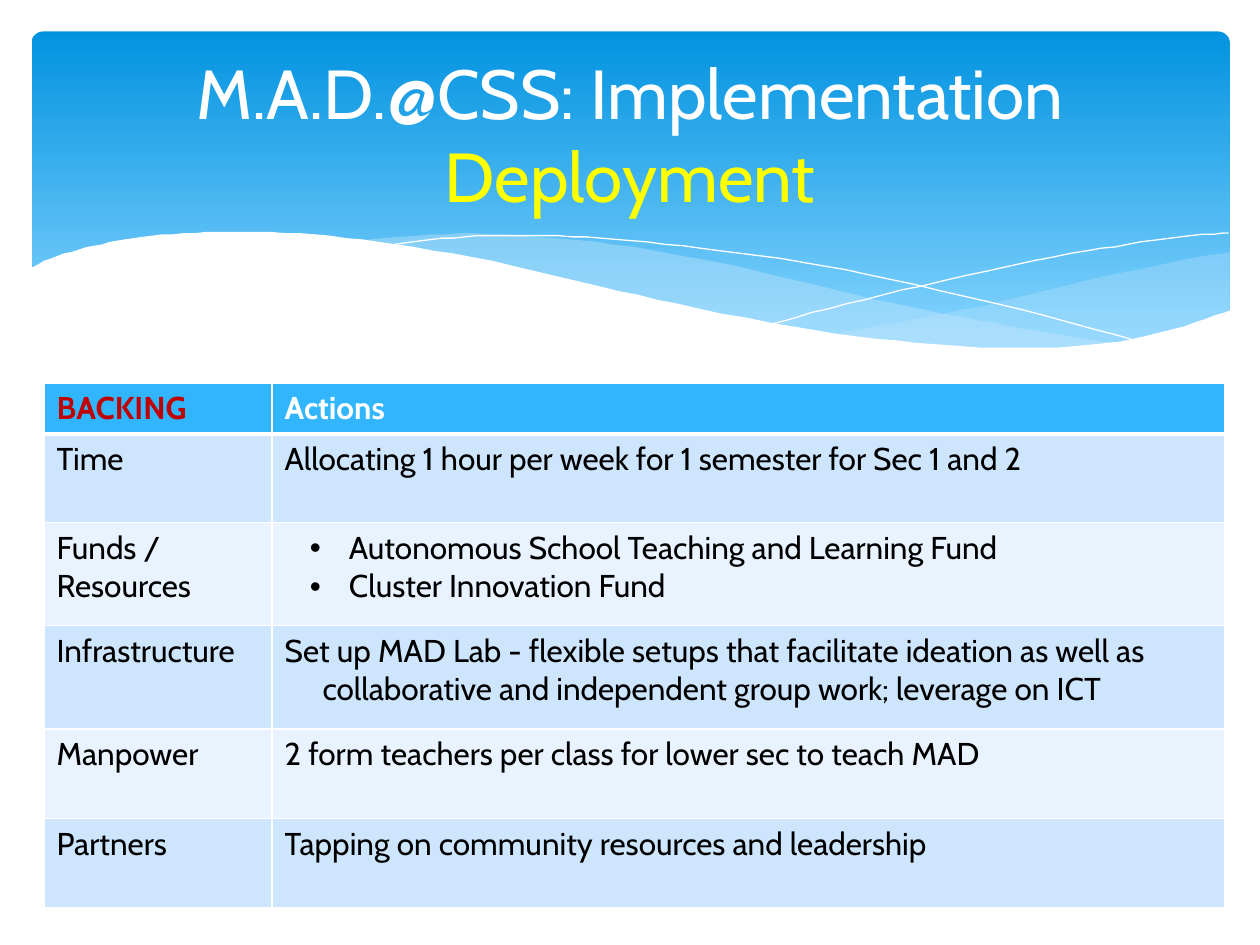
"""Build the slide on the deployment of M.A.D.@CSS: a wave banner, a title and a table."""
from pptx import Presentation
from pptx.dml.color import RGBColor
from pptx.enum.shapes import MSO_SHAPE as Shape
from pptx.enum.text import MSO_ANCHOR as Anchor, MSO_AUTO_SIZE as AutoSize, PP_ALIGN as Align
from pptx.oxml.ns import qn
from pptx.util import Inches, Pt
from lxml.etree import SubElement

COLUMNS, ROWS = 1000, 750
CELL = Inches(0.01)
FONT = "Cabin"
COLORS = {
    "white": "FFFFFF", "black": "000000", "yellow": "FFFF00", "red": "C00000",
    "deep": "0293E0", "sky": "83D3FE", "mist": "C6E7FC",
    "header": "31B6FD", "odd": "CEE5FE", "even": "E8F3FF",
}
RIGHT_WAVE = [
    [(976, 200), (935, 207), (861, 223), (779, 243), (706, 257), (661, 265)],
    [(661, 265), (718, 273), (769, 277), (814, 278), (863, 275), (905, 269), (942, 259), (976, 247)],
]
MIDDLE_WAVE = [
    [(893, 273), (837, 265), (775, 254), (706, 240), (629, 222), (569, 208), (514, 198),
     (464, 191), (399, 186), (344, 186), (286, 191)],
    [(286, 191), (342, 199), (404, 211), (491, 232), (566, 248), (634, 261), (695, 270),
     (748, 276), (796, 279), (838, 278), (893, 273)],
]
FALLING_LINE = [[(309, 195), (343, 190), (387, 187), (433, 187), (489, 190), (556, 197),
                 (636, 208), (727, 226), (831, 251), (907, 272)]]
RISING_LINE = [[(613, 257), (672, 241), (748, 223), (836, 204), (895, 194), (937, 188), (975, 185)]]
WHITE_WAVE = [
    [(977, 246), (940, 259), (899, 269), (850, 275), (793, 276), (726, 272), (647, 262),
     (555, 245), (475, 227), (391, 207), (315, 194), (250, 186), (193, 184), (146, 185),
     (106, 189), (75, 195), (46, 203), (23, 213)],
    [(23, 213), (23, 329)],
    [(23, 329), (977, 329)],
]
TABLE_COLUMNS = [181, 756]
TABLE_ROWS = [40, 70, 82, 82, 71, 71]
TABLE_TEXT = [
    ("BACKING", ["Actions"], {}),
    ("Time", ["Allocating 1 hour per week for 1 semester for Sec 1 and 2"], {}),
    ("Funds / Resources", ["Autonomous School Teaching and Learning Fund", "Cluster Innovation Fund"],
     {"margin": 51, "hanging": 31, "bullet": "•"}),
    ("Infrastructure", ["Set up MAD Lab - flexible setups that facilitate ideation as well as "
                        "collaborative and independent group work; leverage on ICT"],
     {"margin": 30, "hanging": 30}),
    ("Manpower", ["2 form teachers per class for lower sec to teach MAD"], {"margin": 30, "hanging": 30}),
    ("Partners", ["Tapping on community resources and leadership"], {"margin": 30, "hanging": 30}),
]


def rgb(name):
    """Return a named colour."""
    return RGBColor.from_string(COLORS[name])


def grid(*counts):
    """Turn counts of grid cells into lengths."""
    return [count * CELL for count in counts]


def write(paragraph, text, size=18, color="black", bold=False):
    """Add a formatted run to a paragraph."""
    run = paragraph.add_run()
    run.text = text
    run.font.name, run.font.size, run.font.bold = FONT, Pt(size), bold
    run.font.color.rgb = rgb(color)


def indent(paragraph, margin=0, hanging=0, bullet=None):
    """Set the indents and the bullet of a paragraph."""
    properties = paragraph._p.get_or_add_pPr()
    properties.set("marL", str(margin * CELL))
    properties.set("indent", str(-hanging * CELL))
    if bullet:
        SubElement(properties, qn("a:buFont"), typeface="Arial")
        SubElement(properties, qn("a:buChar"), char=bullet)
    else:
        SubElement(properties, qn("a:buNone"))


def smooth(points, steps=5):
    """Return points along a Catmull-Rom curve through the given points."""
    padded = [points[0], *points, points[-1]]
    result = [points[0]]
    for a, b, c, d in zip(padded, padded[1:], padded[2:], padded[3:]):
        for step in range(1, steps + 1):
            t = step / steps
            result.append(tuple(
                (2 * q + (r - p) * t + (2 * p - 5 * q + 4 * r - s) * t ** 2
                 + (3 * q - p - 3 * r + s) * t ** 3) / 2
                for p, q, r, s in zip(a, b, c, d)))
    return result


def add_wave(slide, curves, fill=None, opacity=100):
    """Draw joined curves as a filled area, or as a white hairline without a fill."""
    points = [point for curve in curves for point in (smooth(curve) if len(curve) > 2 else curve)]
    builder = slide.shapes.build_freeform(*points[0], scale=CELL)
    builder.add_line_segments(points[1:], close=fill is not None)
    shape = builder.convert_to_shape()
    shape.shadow.inherit = False
    if fill is None:
        shape.fill.background()
        shape.line.color.rgb = rgb("white")
        shape.line.width = Pt(0)
        return
    shape.line.fill.background()
    shape.fill.solid()
    shape.fill.fore_color.rgb = rgb(fill)
    if opacity < 100:
        color = shape._element.spPr.find(qn("a:solidFill"))[0]
        SubElement(color, qn("a:alpha"), val=str(opacity * 1000))


def add_banner(slide):
    """Draw the rounded gradient banner and the waves over it."""
    banner = slide.shapes.add_shape(Shape.ROUNDED_RECTANGLE, *grid(25, 25, 951, 270))
    banner.adjustments[0] = 0.034
    banner.shadow.inherit = False
    banner.line.fill.background()
    banner.fill.gradient()
    banner.fill.gradient_angle = 270
    for stop, name, position in zip(banner.fill.gradient_stops, ("deep", "sky"), (0, 0.9)):
        stop.color.rgb = rgb(name)
        stop.position = position
    add_wave(slide, RIGHT_WAVE, "mist", 29)
    add_wave(slide, MIDDLE_WAVE, "mist", 40)
    add_wave(slide, FALLING_LINE)
    add_wave(slide, RISING_LINE)
    add_wave(slide, WHITE_WAVE, "white")


def set_title(slide):
    """Place the title over the banner and write its two lines."""
    title = slide.shapes.title
    title._element.getparent().append(title._element)
    title.left, title.top, title.width, title.height = grid(50, 37, 900, 137)
    frame = title.text_frame
    frame.auto_size, frame.vertical_anchor = AutoSize.NONE, Anchor.MIDDLE
    paragraph = frame.paragraphs[0]
    paragraph.alignment = Align.CENTER
    write(paragraph, "M.A.D.@CSS: Implementation", size=39.6, color="white")
    paragraph.add_line_break()
    write(paragraph, "Deployment", size=39.6, color="yellow")


def format_cell(cell, fill, bottom=1):
    """Give a cell white borders and a fill."""
    properties = cell._tc.get_or_add_tcPr()
    for side, width in (("L", 1), ("R", 1), ("T", 1), ("B", bottom)):
        line = SubElement(properties, qn(f"a:ln{side}"), w=str(Pt(width)))
        SubElement(SubElement(line, qn("a:solidFill")), qn("a:srgbClr"), val=COLORS["white"])
    cell.fill.solid()
    cell.fill.fore_color.rgb = rgb(fill)


def add_actions_table(slide):
    """Add the table of backing and actions."""
    frame = slide.shapes.add_table(
        len(TABLE_ROWS), len(TABLE_COLUMNS),
        *grid(35, 304, sum(TABLE_COLUMNS), sum(TABLE_ROWS)))
    table = frame.table
    for column, width in zip(table.columns, grid(*TABLE_COLUMNS)):
        column.width = width
    for row, height in zip(table.rows, grid(*TABLE_ROWS)):
        row.height = height
    for index, (backing, actions, layout) in enumerate(TABLE_TEXT):
        header = index == 0
        fill = "header" if header else "odd" if index % 2 else "even"
        label, detail = table.cell(index, 0), table.cell(index, 1)
        for cell in (label, detail):
            format_cell(cell, fill, bottom=3 if header else 1)
        write(label.text_frame.paragraphs[0], backing, color="red" if header else "black", bold=header)
        for number, action in enumerate(actions):
            text = detail.text_frame
            paragraph = text.add_paragraph() if number else text.paragraphs[0]
            paragraph.level = 0 if header else 1
            indent(paragraph, **layout)
            write(paragraph, action, color="white" if header else "black", bold=header)


def main():
    """Build and save the presentation."""
    presentation = Presentation()
    presentation.slide_width, presentation.slide_height = grid(COLUMNS, ROWS)
    slide = presentation.slides.add_slide(presentation.slide_layouts[5])
    add_banner(slide)
    set_title(slide)
    add_actions_table(slide)
    presentation.save("out.pptx")


if __name__ == "__main__":
    main()
